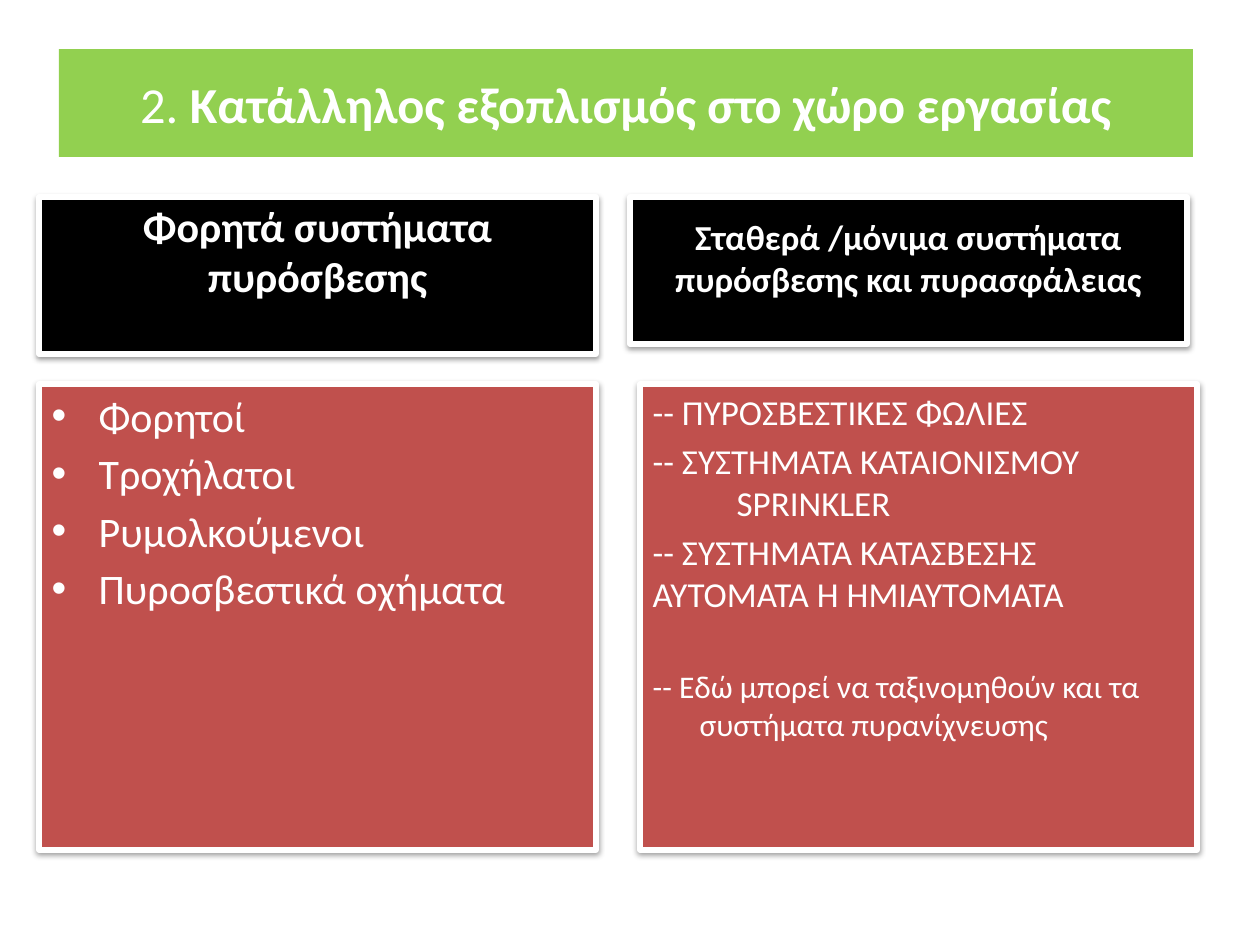
from lxml import etree
from pptx import Presentation
from pptx import util as u
from pptx.dml.color import RGBColor
from pptx.enum import text
from pptx.oxml import ns, parse_xml

PX = 914400 / 126
COLORS = {"title": "92D050", "heading": "000000", "list": "C0504D", "white": "FFFFFF"}
SHADOW = (
    f'<a:effectLst {ns.nsdecls("a")}>'
    '<a:outerShdw blurRad="40000" dist="20000" dir="5400000" rotWithShape="0">'
    '<a:srgbClr val="000000"><a:alpha val="38000"/></a:srgbClr>'
    '</a:outerShdw></a:effectLst>'
)


def place(sp, box, color):
    sp.left, sp.top, sp.width, sp.height = [round(v * PX) for v in box]
    sp.fill.solid()
    sp.fill.fore_color.rgb = RGBColor.from_string(COLORS[color])
    tf = sp.text_frame
    tf.word_wrap = True
    tf.auto_size = text.MSO_AUTO_SIZE.NONE
    return tf


def style(r, size, bold=False):
    r.font.name = "Calibri"
    r.font.size = u.Pt(size)
    r.font.bold = bold
    r.font.color.rgb = RGBColor.from_string(COLORS["white"])


prs = Presentation()
prs.slide_width, prs.slide_height = u.Inches(10), u.Inches(7.5)
s = prs.slides.add_slide(prs.slide_layouts[4])
ph = {sp.placeholder_format.idx: sp for sp in s.placeholders}

tf = place(ph[0], (59, 49, 1134, 108), "title")
tf.vertical_anchor = text.MSO_ANCHOR.MIDDLE
p = tf.paragraphs[0]
p.alignment = text.PP_ALIGN.CENTER
for words, bold in [("2. ", False), ("Κατάλληλος εξοπλισμός στο χώρο εργασίας", True)]:
    r = p.add_run()
    r.text = words
    style(r, 28.8, bold)

headings = [
    (1, (39, 197, 557, 157), 53, 24, "Φορητά συστήματα πυρόσβεσης"),
    (3, (630, 197, 557, 147), 44, 20,
     "Σταθερά /μόνιμα συστήματα πυρόσβεσης και πυρασφάλειας"),
]
for idx, box, bottom, size, words in headings:
    tf = place(ph[idx], box, "heading")
    tf.vertical_anchor = text.MSO_ANCHOR.BOTTOM
    tf.margin_bottom = round(bottom * PX)
    tf.text = words
    p = tf.paragraphs[0]
    p.alignment = text.PP_ALIGN.CENTER
    p.space_before = u.Pt(0)
    style(p.runs[0], size, True)

portable = ["Φορητοί", "Τροχήλατοι", "Ρυμολκούμενοι", "Πυροσβεστικά οχήματα"]
fixed = [
    ("-- ΠΥΡΟΣΒΕΣΤΙΚΕΣ ΦΩΛΙΕΣ", 20, 84, 0),
    ("-- ΣΥΣΤΗΜΑΤΑ ΚΑΤΑΙΟΝΙΣΜΟΥ SPRINKLER", 20, 84, 4),
    ("-- ΣΥΣΤΗΜΑΤΑ ΚΑΤΑΣΒΕΣΗΣ ΑΥΤΟΜΑΤΑ Ή ΗΜΙΑΥΤΟΜΑΤΑ", 20, 0, 4),
    ("-- Εδώ μπορεί να ταξινομηθούν και τα συστήματα πυρανίχνευσης", 18, 47, 30),
]
lists = [
    (2, 39, True, [(words, 24, 47, 4 if i else 0) for i, words in enumerate(portable)]),
    (4, 640, False, fixed),
]
for idx, left, bullets, items in lists:
    tf = place(ph[idx], (left, 384, 557, 466), "list")
    tf.vertical_anchor = text.MSO_ANCHOR.TOP
    tf.text = "\n".join(item[0] for item in items)
    for p, (words, size, indent, before) in zip(tf.paragraphs, items):
        p.space_before = u.Pt(before)
        pPr = p._p.get_or_add_pPr()
        pPr.set("marL", str(round(indent * PX)))
        pPr.set("indent", str(-round(indent * PX)))
        if bullets:
            etree.SubElement(pPr, ns.qn("a:buChar")).set("char", "•")
        else:
            etree.SubElement(pPr, ns.qn("a:buNone"))
        style(p.runs[0], size)

for idx in range(1, 5):
    sp = ph[idx]
    sp.line.color.rgb = RGBColor.from_string(COLORS["white"])
    sp.line.width = u.Pt(3)
    sp._element.spPr.append(parse_xml(SHADOW))

prs.save("out.pptx")
